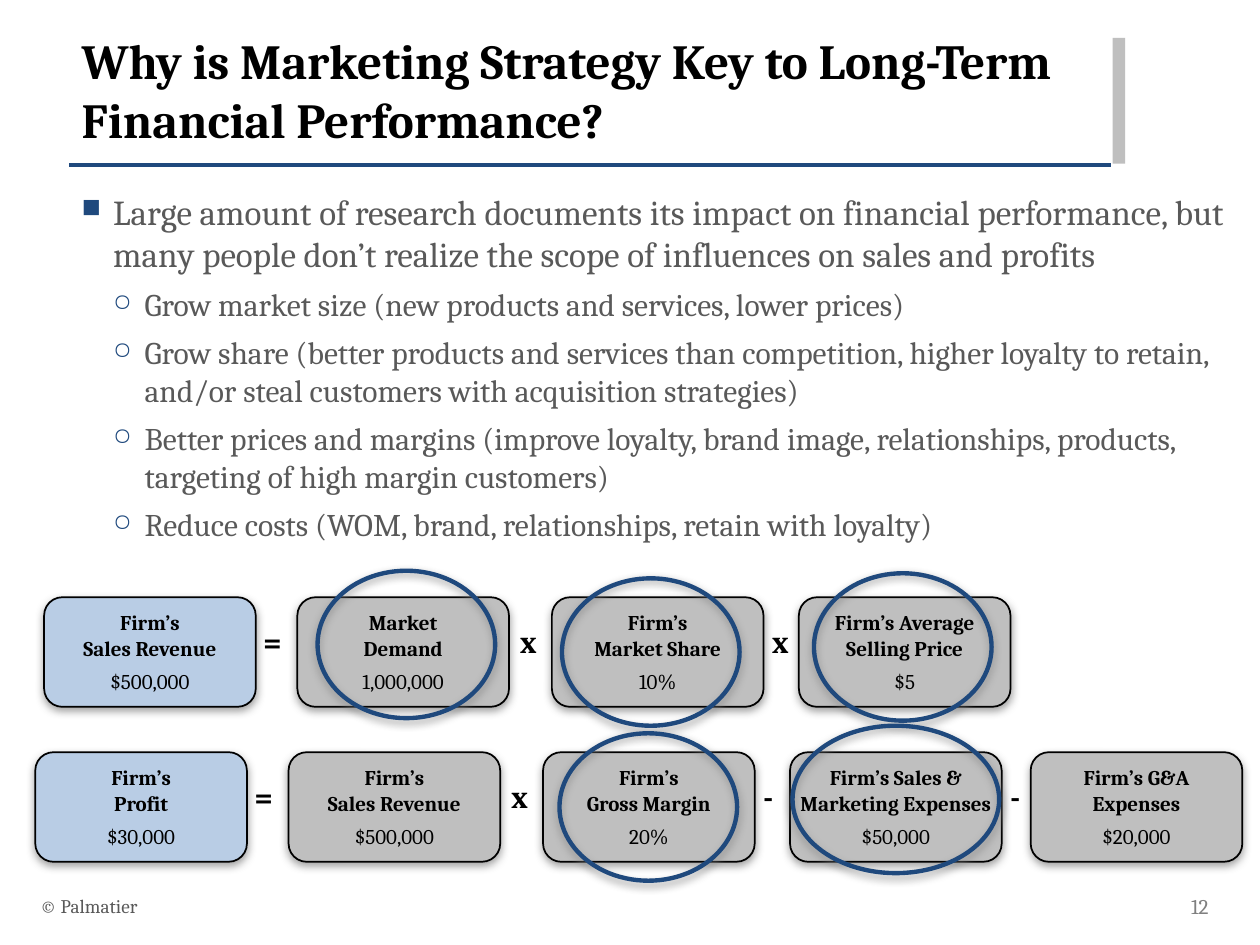
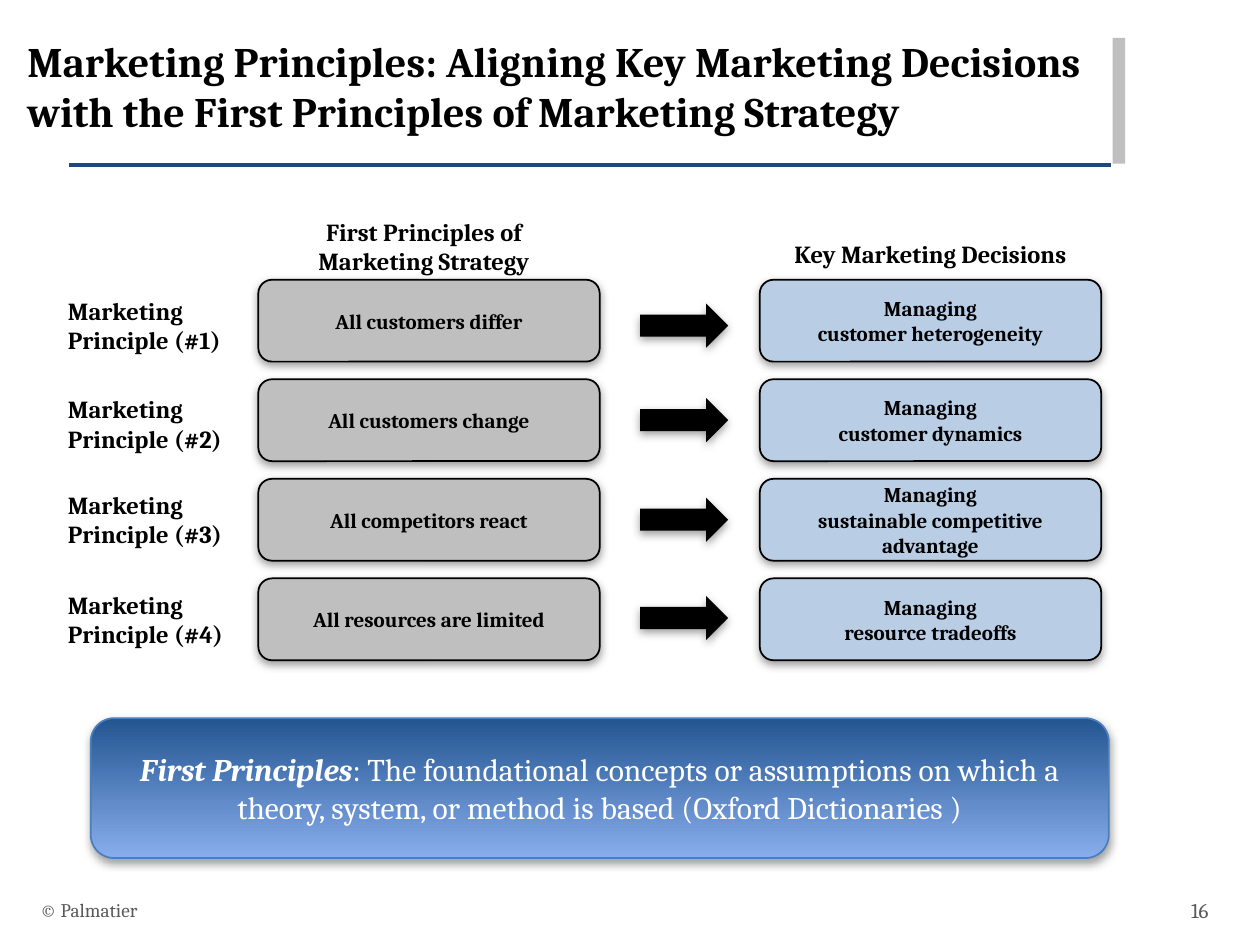
from dataclasses import dataclass

from lxml.etree import SubElement
from pptx import Presentation
from pptx.dml.color import RGBColor
from pptx.enum.shapes import MSO_CONNECTOR, MSO_SHAPE
from pptx.enum.text import MSO_ANCHOR, PP_ALIGN
from pptx.oxml.ns import qn
from pptx.util import Inches, Pt

FONT = "Cambria"
BLACK = RGBColor(0x00, 0x00, 0x00)
WHITE = RGBColor(0xFF, 0xFF, 0xFF)
NAVY = RGBColor(0x1F, 0x49, 0x7D)
PALE_BLUE = RGBColor(0xB9, 0xCD, 0xE5)
SILVER = RGBColor(0xBF, 0xBF, 0xBF)
TEXT_GRAY = RGBColor(0x59, 0x59, 0x59)
MID_GRAY = RGBColor(0x80, 0x80, 0x80)
BANNER_TOP = RGBColor(0x23, 0x55, 0x91)
BANNER_BOTTOM = RGBColor(0x88, 0xAD, 0xED)
BANNER_LINE = RGBColor(0x4B, 0x7E, 0xBC)


@dataclass
class Term:
    """One box of a formula; circle is (x, y, width) relative to the box."""
    label: str
    value: str
    circle: tuple = ()
    side: float = 0.1


def write(box, *paras, size=12, bold=True, color=BLACK, align=PP_ALIGN.LEFT,
          anchor=MSO_ANCHOR.TOP, side=0.1, wrap=True):
    """Fill a shape; each paragraph is a string or a list of (text, bold, italic)."""
    frame = box.text_frame
    frame.word_wrap = wrap
    frame.vertical_anchor = anchor
    frame.margin_left = frame.margin_right = Inches(side)
    frame.margin_top = frame.margin_bottom = Inches(0.05)
    for index, spans in enumerate(paras):
        para = frame.add_paragraph() if index else frame.paragraphs[0]
        para.alignment = align
        if isinstance(spans, str):
            spans = [(spans, bold, False)]
        for text, is_bold, is_italic in spans:
            span = para.add_run()
            span.text = text
            font = span.font
            font.name, font.size = FONT, Pt(size)
            font.bold, font.italic = is_bold, is_italic
            font.color.rgb = color
    return frame


def add_label(page, left, top, width, height, *paras, **text_format):
    box = page.shapes.add_textbox(Inches(left), Inches(top), Inches(width), Inches(height))
    return write(box, *paras, **text_format)


def add_shadow(shape):
    effects = SubElement(shape.element.spPr, qn("a:effectLst"))
    shadow = SubElement(effects, qn("a:outerShdw"), blurRad=str(Pt(5)), dist=str(Pt(2)),
                        dir="5400000", rotWithShape="0")
    color = SubElement(shadow, qn("a:srgbClr"), val=str(MID_GRAY))
    SubElement(color, qn("a:alpha"), val="75000")


def add_figure(page, kind, left, top, width, height, fill=None, line=None,
               weight=1, shadow=True):
    shape = page.shapes.add_shape(kind, Inches(left), Inches(top), Inches(width), Inches(height))
    if fill is None:
        shape.fill.background()
    else:
        shape.fill.solid()
        shape.fill.fore_color.rgb = fill
    if line is None:
        shape.line.fill.background()
    else:
        shape.line.color.rgb = line
        shape.line.width = Pt(weight)
    if shadow:
        add_shadow(shape)
    else:
        shape.shadow.inherit = False
    return shape


def add_card(page, left, top, width, height, fill, *paras, side=0.1):
    card = add_figure(page, MSO_SHAPE.ROUNDED_RECTANGLE, left, top, width, height, fill, BLACK)
    return write(card, *paras, align=PP_ALIGN.CENTER, anchor=MSO_ANCHOR.MIDDLE, side=side)


def add_page(deck, title, title_box, title_size, number, number_color, footer_top):
    """Add a slide with the shared title, rule, side bar and footer."""
    page = deck.slides.add_slide(deck.slide_layouts[6])
    rule = page.shapes.add_connector(MSO_CONNECTOR.STRAIGHT, Inches(0.55), Inches(1.31),
                                     Inches(8.82), Inches(1.31))
    rule.line.color.rgb = NAVY
    rule.line.width = Pt(2)
    SubElement(rule.element.spPr, qn("a:effectLst"))
    add_figure(page, MSO_SHAPE.RECTANGLE, 8.83, 0.3, 0.1, 1, SILVER, shadow=False)
    add_label(page, *title_box, title, size=title_size)
    footer = {"bold": False, "anchor": MSO_ANCHOR.MIDDLE}
    add_label(page, 0.22, footer_top, 6.7, 0.4, "© Palmatier", size=11,
              color=TEXT_GRAY, **footer)
    add_label(page, 9.08, footer_top, 0.61, 0.4, number, size=12, color=number_color,
              align=PP_ALIGN.RIGHT, **footer)
    return page


def add_bullet(para, level):
    props = para._p.get_or_add_pPr()
    props.set("marL", str(Inches(0.25 * (level + 1))))
    props.set("indent", str(Inches(-0.25)))
    bullet_color = SubElement(props, qn("a:buClr"))
    SubElement(bullet_color, qn("a:srgbClr"), val=str(NAVY))
    SubElement(props, qn("a:buSzPct"), val="75000")
    SubElement(props, qn("a:buChar"), char="■○"[level])
    para.level = level


def add_bullet_list(page, left, top, width, height, heading, points):
    frame = add_label(page, left, top, width, height, heading, *points, size=18,
                      bold=False, color=TEXT_GRAY)
    lead, *details = frame.paragraphs
    add_bullet(lead, 0)
    lead.runs[0].font.size = Pt(20)
    for para in details:
        add_bullet(para, 1)
        para.space_before = Pt(6)


def add_formula(page, left, top, terms, operators):
    """Draw a row of boxes joined by operators, the first box being the result."""
    offsets = (0, 2.01, 4.03, 5.99, 7.9)
    gaps = (1.64, 3.68, 5.68, 7.64)
    for index, (offset, term) in enumerate(zip(offsets, terms)):
        frame = add_card(page, left + offset, top, 1.68, 0.87, SILVER if index else PALE_BLUE,
                         *term.label.split("\n"), term.value, side=term.side)
        amount = frame.paragraphs[-1]
        amount.space_before = Pt(4.8)
        amount.runs[0].font.bold = False
    for gap, operator in zip(gaps, operators):
        add_label(page, left + gap, top + 0.15, 0.33, 0.4, operator, size=18, wrap=False)
    for offset, term in zip(offsets, terms):
        if term.circle:
            x, y, width = term.circle
            add_figure(page, MSO_SHAPE.OVAL, left + offset + x, top + y, width, 1.17,
                       line=NAVY, weight=2.5)


def add_principle(page, top, number, principle, decision, label_drop, arrow_drop):
    add_label(page, 0.44, top + label_drop, 1.6, 0.57, f"Marketing Principle (#{number})", size=14)
    add_card(page, 2.05, top, 2.71, 0.65, SILVER, principle)
    add_figure(page, MSO_SHAPE.RIGHT_ARROW, 5.08, top + arrow_drop, 0.7, 0.35, BLACK)
    add_card(page, 6.03, top, 2.71, 0.65, PALE_BLUE, "Managing", decision)


def add_banner(page, left, top, width, height):
    banner = add_figure(page, MSO_SHAPE.ROUNDED_RECTANGLE, left, top, width, height,
                        line=BANNER_LINE)
    banner.fill.gradient()
    banner.fill.gradient_angle = 270
    for stop, color in zip(banner.fill.gradient_stops, (BANNER_TOP, BANNER_BOTTOM)):
        stop.color.rgb = color
    definition = (": The foundational concepts or assumptions on which a theory, system, "
                  "or method is based (Oxford Dictionaries )")
    write(banner, [("First Principles", True, True), (definition, False, False)],
          size=18, color=WHITE, align=PP_ALIGN.CENTER, anchor=MSO_ANCHOR.MIDDLE)


def build_performance_page(deck):
    page = add_page(deck, "Why is Marketing Strategy Key to Long-Term Financial Performance?",
                    (0.55, 0.19, 8.26, 0.88), 28, "12", MID_GRAY, 6.99)
    add_bullet_list(
        page, 0.55, 1.46, 9.31, 3,
        "Large amount of research documents its impact on financial performance, but many "
        "people don’t realize the scope of influences on sales and profits",
        ["Grow market size (new products and services, lower prices)",
         "Grow share (better products and services than competition, higher loyalty to "
         "retain, and/or steal customers with acquisition strategies)",
         "Better prices and margins (improve loyalty, brand image, relationships, products, "
         "targeting of high margin customers)",
         "Reduce costs (WOM, brand, relationships, retain with loyalty)"])
    add_formula(page, 0.35, 4.74, [
        Term("Firm’s\nSales Revenue", "$500,000"),
        Term("Market\nDemand", "1,000,000", (0.16, -0.21, 1.41)),
        Term("Firm’s\nMarket Share", "10%", (0.08, -0.15, 1.41)),
        Term("Firm’s Average Selling Price", "$5", (0.12, -0.19, 1.41)),
    ], "=xx")
    add_formula(page, 0.28, 5.97, [
        Term("Firm’s\nProfit", "$30,000"),
        Term("Firm’s\nSales Revenue", "$500,000"),
        Term("Firm’s\nGross Margin", "20%", (0.13, -0.15, 1.41)),
        Term("Firm’s Sales & Marketing Expenses", "$50,000", (0.02, -0.21, 1.64), side=0.04),
        Term("Firm’s G&A Expenses", "$20,000"),
    ], "=x--")


def build_principles_page(deck):
    page = add_page(deck, "Marketing Principles: Aligning Key Marketing Decisions with the "
                    "First Principles of Marketing Strategy",
                    (0.12, 0.23, 9.27, 0.88), 24, "16", TEXT_GRAY, 7.02)
    heading = {"size": 14, "align": PP_ALIGN.CENTER}
    add_label(page, 2.03, 1.67, 2.67, 0.57, "First Principles of Marketing Strategy", **heading)
    add_label(page, 6.03, 1.85, 2.71, 0.34, "Key Marketing Decisions", **heading)
    principles = [
        ("All customers differ", "customer heterogeneity", 0.08, 0.19),
        ("All customers change", "customer dynamics", 0.07, 0.15),
        ("All competitors react", "sustainable competitive advantage", 0.04, 0.15),
        ("All resources are limited", "resource tradeoffs", 0.04, 0.14),
    ]
    for index, row in enumerate(principles):
        add_principle(page, 2.22 + 0.79 * index, index + 1, *row)
    add_banner(page, 0.72, 5.7, 8.08, 1.11)


def main():
    deck = Presentation()
    deck.slide_width, deck.slide_height = Inches(10), Inches(7.5)
    build_performance_page(deck)
    build_principles_page(deck)
    deck.save("out.pptx")


if __name__ == "__main__":
    main()
